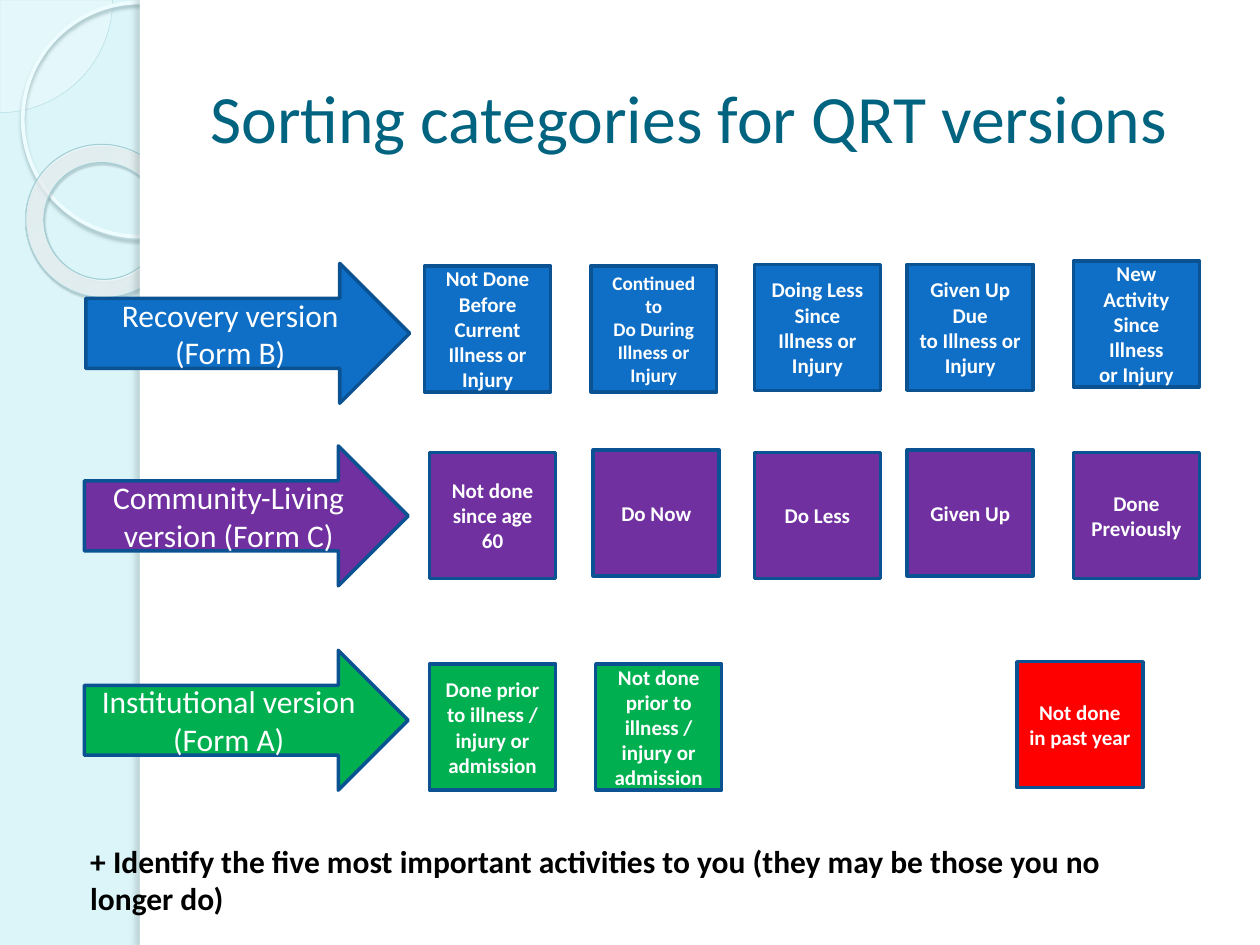
import pptx
import pptx.dml.color
import pptx.enum.shapes
import pptx.enum.text
import pptx.oxml
import pptx.oxml.ns
import pptx.util

Cm = pptx.util.Cm
Pt = pptx.util.Pt
RGB = pptx.dml.color.RGBColor.from_string
SHAPE = pptx.enum.shapes.MSO_SHAPE
ALIGN = pptx.enum.text.PP_ALIGN
ANCHOR = pptx.enum.text.MSO_ANCHOR
qn = pptx.oxml.ns.qn
NAMESPACE = pptx.oxml.ns.nsdecls("a")

COLOURS = {
    "background": "DBF5F9", "white": "FFFFFF", "black": "000000",
    "title": "00637F", "outline": "0B5292",
    "blue": "0F6FC6", "purple": "7030A0", "green": "00B050", "red": "FF0000",
    "pie": "F8FEFF", "pie line": "AFDBE2", "circle line": "EDFCFF",
    "ring line": "A1CFD6", "ring inner": "F9FEFF", "ring middle": "FDFFFF",
    "ring outer": "9EF2FF", "circle shadow": "9CB9BE",
    "ring shadow": "4B5E61", "panel shadow": "6C7A7C",
}


def write_text(box, text, size=12, colour="white", bold=False,
               align=ALIGN.CENTER, anchor=ANCHOR.MIDDLE):
    """Fill a box with text, one paragraph for each line."""
    frame = box.text_frame
    frame.word_wrap = True
    frame.vertical_anchor = anchor
    frame.text = text
    for para in frame.paragraphs:
        para.alignment = align
        for span in para.runs:
            span.font.name = "Calibri"
            span.font.size = Pt(size)
            span.font.bold = bold
            span.font.color.rgb = RGB(COLOURS[colour])


def draw_shape(kind, left, top, width, height, fill=None, line=None,
               weight=2, shadow=None):
    """Add a shape measured in cm; shadow is colour, opacity, blur, distance, angle."""
    shape = page.shapes.add_shape(kind, Cm(left), Cm(top), Cm(width), Cm(height))
    shape.shadow.inherit = False
    if fill:
        shape.fill.solid()
        shape.fill.fore_color.rgb = RGB(COLOURS[fill])
    else:
        shape.fill.background()
    if line:
        shape.line.color.rgb = RGB(COLOURS[line])
        shape.line.width = Pt(weight)
    else:
        shape.line.fill.background()
    if shadow:
        colour, opacity, blur, distance, angle = shadow
        shape._element.spPr.find(qn("a:effectLst")).append(pptx.oxml.parse_xml(
            f'<a:outerShdw {NAMESPACE} blurRad="{Pt(blur)}" dist="{Pt(distance)}" '
            f'dir="{angle * 60000}" algn="tl" rotWithShape="0">'
            f'<a:srgbClr val="{COLOURS[colour]}"><a:alpha val="{opacity * 1000}"/>'
            f'</a:srgbClr></a:outerShdw>'))
    return shape


deck = pptx.Presentation()
deck.slide_width, deck.slide_height = Cm(25.4), Cm(19.05)
page = deck.slides.add_slide(deck.slide_layouts[6])
page.background.fill.solid()
page.background.fill.fore_color.rgb = RGB(COLOURS["background"])

# Corner quarter circle, one third opaque
pie = draw_shape(SHAPE.PIE, -2.27, -2.27, 4.54, 4.54, "pie", "pie line", 0.25)
pie.adjustments[0], pie.adjustments[1] = 0, 54.02
pie_colour = pie._element.spPr.find(qn("a:solidFill"))[0]
pie_colour.append(pptx.oxml.parse_xml(f'<a:alpha {NAMESPACE} val="33000"/>'))

# Large circle and tilted ring
draw_shape(SHAPE.OVAL, 0.46, 0.05, 4.72, 4.72, line="circle line", weight=2.15,
           shadow=("circle shadow", 85, 2, 2, 90))
ring = draw_shape(SHAPE.DONUT, 0.51, 2.92, 3.12, 3.07, "ring inner", "ring line",
                  0.58, shadow=("ring shadow", 35, 1, 1.2, 75))
ring.rotation = 38.6
ring.adjustments[0] = 0.12
stops = "".join(
    f'<a:gs pos="{position * 1000}"><a:srgbClr val="{COLOURS[colour]}">'
    f'<a:alpha val="{opacity * 1000}"/></a:srgbClr></a:gs>'
    for position, colour, opacity in [
        (0, "ring inner", 70), (70, "ring middle", 55), (100, "ring outer", 60)])
ring_properties = ring._element.spPr
ring_properties.replace(ring_properties.find(qn("a:solidFill")), pptx.oxml.parse_xml(
    f'<a:gradFill {NAMESPACE} rotWithShape="1"><a:gsLst>{stops}</a:gsLst>'
    '<a:path path="circle"><a:fillToRect l="-408000" t="-50000" r="508000" '
    'b="150000"/></a:path></a:gradFill>'))

# White content panel with a shadowed left edge
draw_shape(SHAPE.RECTANGLE, 2.82, 0, 22.58, 19.05, "white")
draw_shape(SHAPE.RECTANGLE, 2.82, 0, 0.2, 19.05, "white",
           shadow=("panel shadow", 25, 3, 3, 180))

# Title
title = page.shapes.add_textbox(Cm(3.99), Cm(0.76), Cm(20.83), Cm(3.18))
write_text(title, "Sorting categories for QRT versions", size=38.7,
           colour="title", align=ALIGN.LEFT)

# Version arrows: text, colour, left, top
versions = [
    ("Recovery version (Form B)", "blue", 1.73, 5.31),
    ("Community-Living version (Form C)", "purple", 1.7, 8.99),
    ("Institutional version (Form A)", "green", 1.7, 13.11),
]
for text, colour, left, top in versions:
    arrow = draw_shape(SHAPE.RIGHT_ARROW, left, top, 6.53, 2.82, colour, "outline")
    write_text(arrow, text, size=18)

# Category squares: text, colour, left, top, text size
categories = [
    ("Not Done\nBefore\nCurrent\nIllness or\nInjury", "blue", 8.56, 5.36, 12),
    ("Continued to\nDo During\nIllness or\nInjury", "blue", 11.91, 5.36, 11),
    ("Doing Less\nSince Illness or\nInjury", "blue", 15.21, 5.33, 12),
    ("Given Up Due\nto Illness or\nInjury", "blue", 18.29, 5.33, 12),
    ("New Activity\nSince Illness\nor Injury", "blue", 21.64, 5.26, 12),
    ("Not done since age 60", "purple", 8.66, 9.12, 12),
    ("Do Now", "purple", 11.96, 9.07, 12),
    ("Do Less", "purple", 15.21, 9.12, 12),
    ("Given Up", "purple", 18.29, 9.07, 12),
    ("Done\nPreviously", "purple", 21.64, 9.12, 12),
    ("Done prior to illness / injury or admission", "green", 8.66, 13.39, 12),
    ("Not done prior to illness / injury or admission", "green", 12.01, 13.39, 12),
    ("Not done in past year", "red", 20.5, 13.34, 12),
]
for text, colour, left, top, size in categories:
    square = draw_shape(SHAPE.RECTANGLE, left, top, 2.54, 2.54, colour, "outline")
    write_text(square, text, size=size, bold=True)

# Closing instruction
closing = page.shapes.add_textbox(Cm(1.57), Cm(16.84), Cm(22.15), Cm(1.8))
write_text(closing, "+ Identify the five most important activities to you "
           "(they may be those you no longer do)", size=18, colour="black",
           bold=True, align=ALIGN.LEFT, anchor=ANCHOR.TOP)

deck.save("out.pptx")
